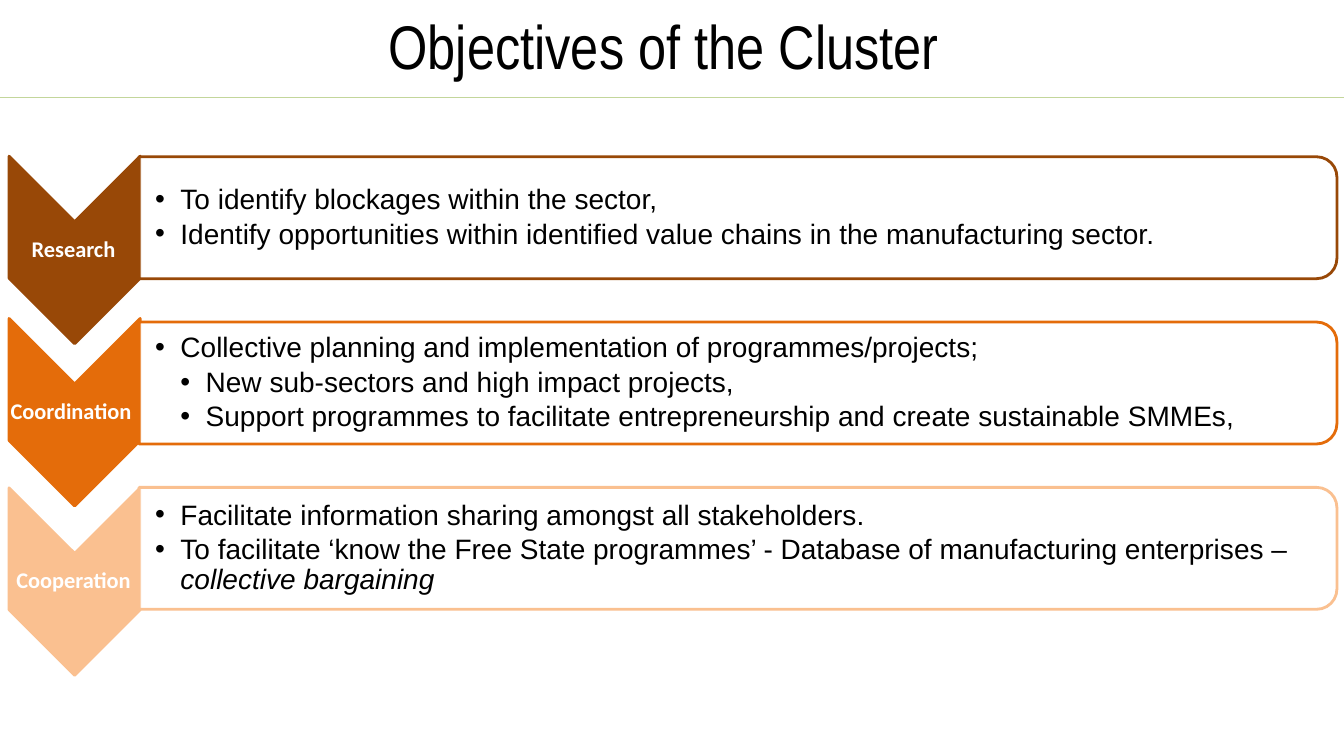
"""Build the slide on the objectives of the cluster."""
from dataclasses import dataclass

from lxml.etree import SubElement
from pptx import Presentation
from pptx.dml.color import RGBColor
from pptx.enum.shapes import MSO_SHAPE
from pptx.enum.text import MSO_ANCHOR, PP_ALIGN
from pptx.oxml.ns import qn
from pptx.util import Inches, Pt


@dataclass(frozen=True)
class Theme:
    """Colours, fonts and type sizes."""
    ink: str = "000000"
    paper: str = "FFFFFF"
    rule: str = "C3D69B"
    title_font: str = "Arial Narrow"
    label_font: str = "Calibri"
    body_font: str = "Arial"
    title_size: float = 44
    label_size: float = 16
    body_size: float = 20
    outline: float = 2


@dataclass(frozen=True)
class Point:
    """One bullet, with an optional italic ending."""
    wording: str
    level: int = 1
    italic_ending: str = ""


@dataclass(frozen=True)
class Objective:
    """One chevron with its panel of bullets."""
    label: str
    colour: str
    chevron_middle: float
    points: tuple[Point, ...]


THEME = Theme()
CHEVRON_CENTRE, CHEVRON_LENGTH, CHEVRON_WIDTH = 0.74, 1.86, 1.3
LABEL_HEIGHT = 0.56
PANEL_LEFT, PANEL_WIDTH, PANEL_HEIGHT = 1.38, 11.88, 1.21
BULLETS_WIDTH, BULLETS_HEIGHT = 11.82, 1.09
FIRST_PANEL_MIDDLE, PANEL_PITCH = 2.16, 1.64

OBJECTIVES = (
    Objective("Research", "984807", 2.48, (
        Point("To identify blockages within the sector,"),
        Point("Identify opportunities within identified value chains in the manufacturing sector."),
    )),
    Objective("Coordination ", "E46C0A", 4.09, (
        Point("Collective planning and implementation of programmes/projects;"),
        Point("New sub-sectors and high impact projects,", 2),
        Point("Support programmes to facilitate entrepreneurship and create sustainable SMMEs,", 2),
    )),
    Objective("Cooperation", "FAC090", 5.77, (
        Point("Facilitate information sharing amongst all stakeholders."),
        Point("To facilitate ‘know the Free State programmes’ - Database of manufacturing enterprises – ",
              italic_ending="collective bargaining"),
    )),
)


def add_run(paragraph, wording: str, font: str, size: float, colour: str,
            bold: bool = False, italic: bool = False) -> None:
    """Append one formatted run."""
    run = paragraph.add_run()
    run.text = wording
    run.font.name = font
    run.font.size = Pt(size)
    run.font.color.rgb = RGBColor.from_string(colour)
    run.font.bold = bold
    run.font.italic = italic


def add_turned_shape(slide, preset: MSO_SHAPE, centre: float, middle: float,
                     length: float, breadth: float, fill: str, line: str):
    """Add a preset shape turned a quarter clockwise about its centre."""
    turned = slide.shapes.add_shape(
        preset, Inches(centre - length / 2), Inches(middle - breadth / 2),
        Inches(length), Inches(breadth))
    turned.rotation = 90
    turned.shadow.inherit = False
    turned.fill.solid()
    turned.fill.fore_color.rgb = RGBColor.from_string(fill)
    turned.line.color.rgb = RGBColor.from_string(line)
    turned.line.width = Pt(THEME.outline)
    return turned


def add_text_frame(slide, left: float, middle: float, width: float,
                   height: float, inset: float = 0.01):
    """Add a wrapping text box centred on a height and return its frame."""
    frame = slide.shapes.add_textbox(
        Inches(left), Inches(middle - height / 2), Inches(width), Inches(height)).text_frame
    frame.word_wrap = True
    frame.vertical_anchor = MSO_ANCHOR.MIDDLE
    frame.margin_left = Inches(inset)
    frame.margin_right = frame.margin_top = frame.margin_bottom = Inches(0.01)
    return frame


def add_point(paragraph, point: Point) -> None:
    """Write one bullet into a paragraph."""
    paragraph.level = point.level
    paragraph.line_spacing = 0.9
    paragraph.space_after = Pt(3)
    properties = paragraph._p.get_or_add_pPr()
    properties.set("marL", str(Inches(0.25 * point.level)))
    properties.set("indent", str(Inches(-0.25)))
    SubElement(properties, qn("a:buFont"), typeface=THEME.body_font)
    SubElement(properties, qn("a:buChar"), char="•")
    add_run(paragraph, point.wording, THEME.body_font, THEME.body_size, THEME.ink)
    if point.italic_ending:
        add_run(paragraph, point.italic_ending, THEME.body_font, THEME.body_size,
                THEME.ink, italic=True)


def add_objective(slide, objective: Objective, panel_middle: float) -> None:
    """Draw the chevron, its label, the panel and its bullets."""
    add_turned_shape(slide, MSO_SHAPE.CHEVRON, CHEVRON_CENTRE, objective.chevron_middle,
                     CHEVRON_LENGTH, CHEVRON_WIDTH, objective.colour, objective.colour)
    label = add_text_frame(slide, CHEVRON_CENTRE - CHEVRON_WIDTH / 2 - 0.01,
                           objective.chevron_middle, CHEVRON_WIDTH, LABEL_HEIGHT).paragraphs[0]
    label.alignment = PP_ALIGN.CENTER
    label.line_spacing = 0.9
    add_run(label, objective.label, THEME.label_font, THEME.label_size, THEME.paper, bold=True)

    panel = add_turned_shape(slide, MSO_SHAPE.ROUND_2_SAME_RECTANGLE,
                             PANEL_LEFT + PANEL_WIDTH / 2, panel_middle,
                             PANEL_HEIGHT, PANEL_WIDTH, THEME.paper, objective.colour)
    panel_colour = panel._element.spPr.find(qn("a:solidFill")).find(qn("a:srgbClr"))
    SubElement(panel_colour, qn("a:alpha"), val="90000")
    bullets = add_text_frame(slide, PANEL_LEFT, panel_middle, BULLETS_WIDTH, BULLETS_HEIGHT, 0.16)
    for index, point in enumerate(objective.points):
        add_point(bullets.add_paragraph() if index else bullets.paragraphs[0], point)


def add_title(slide, wording: str) -> None:
    """Draw the outlined title band."""
    band = slide.shapes.add_shape(
        MSO_SHAPE.RECTANGLE, Inches(-0.1), Inches(-0.07), Inches(13.51), Inches(1.04))
    band.shadow.inherit = False
    band.fill.background()
    band.line.color.rgb = RGBColor.from_string(THEME.rule)
    band.line.width = Pt(0.75)
    band.text_frame.word_wrap = True
    band.text_frame.vertical_anchor = MSO_ANCHOR.MIDDLE
    heading = band.text_frame.paragraphs[0]
    heading.alignment = PP_ALIGN.CENTER
    add_run(heading, wording, THEME.title_font, THEME.title_size, THEME.ink)


def main() -> None:
    """Build and save the slide."""
    presentation = Presentation()
    presentation.slide_width = Inches(13.33)
    presentation.slide_height = Inches(7.5)
    slide = presentation.slides.add_slide(presentation.slide_layouts[6])
    add_title(slide, "Objectives of the Cluster ")
    for row, objective in enumerate(OBJECTIVES):
        add_objective(slide, objective, FIRST_PANEL_MIDDLE + row * PANEL_PITCH)
    presentation.save("out.pptx")


if __name__ == "__main__":
    main()
